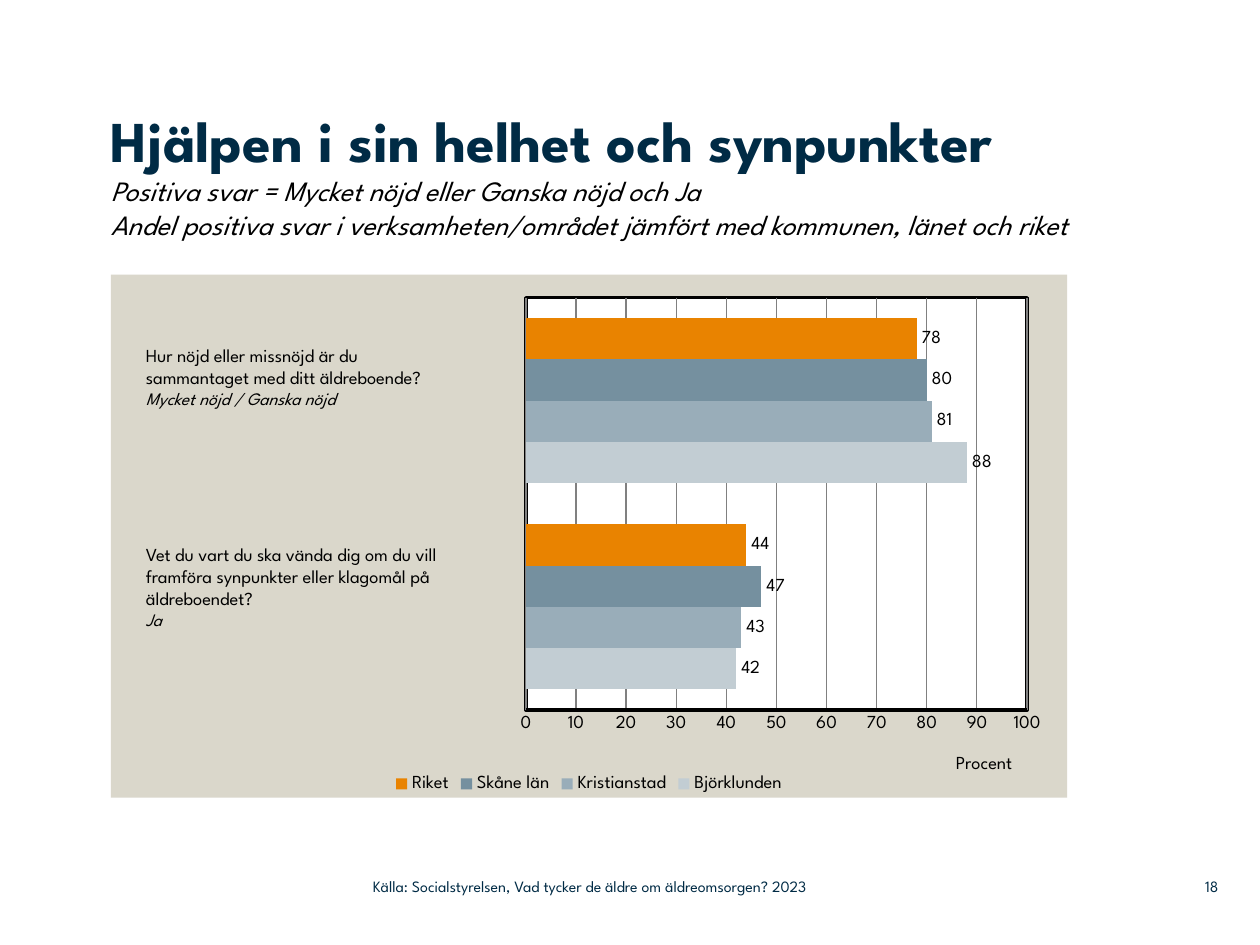
from dataclasses import dataclass

from lxml import etree
from pptx import Presentation
from pptx import util as u
from pptx.chart.data import CategoryChartData
from pptx.dml.color import RGBColor
from pptx.enum import chart as ch, text
from pptx.oxml import ns


@dataclass(frozen=True)
class Theme:
    font: str = "League Spartan"
    navy: str = "002B45"
    black: str = "000000"
    white: str = "FFFFFF"
    grid: str = "808080"
    panel: str = "DAD7CB"
    heading: float = 33
    subheading: float = 16
    body: float = 10.5
    answer: float = 10
    footer: float = 9


THEME = Theme()


def style_font(font, size, color, bold=False, italic=False):
    font.name, font.size, font.bold, font.italic = THEME.font, u.Pt(size), bold, italic
    font.color.rgb = RGBColor.from_string(color)


def add_text(paragraph, words, size=THEME.body, color=THEME.black, **style):
    run = paragraph.add_run()
    run.text = words
    style_font(run.font, size, color, **style)


def paint(fmt, color):
    fmt.fill.solid()
    fmt.fill.fore_color.rgb = RGBColor.from_string(color)


def draw_line(line, color, width):
    line.color.rgb = RGBColor.from_string(color)
    line.width = u.Pt(width)


def add_layout(parent, after, inner=False, **place):
    """Put a manual layout (fractions of the chart) in a chart part."""
    for old in parent.findall(ns.qn("c:layout")):
        parent.remove(old)
    layout = etree.Element(ns.qn("c:layout"))
    manual = etree.SubElement(layout, ns.qn("c:manualLayout"))
    settings = {"layoutTarget": "inner"} if inner else {}
    settings.update(xMode="edge", yMode="edge", **place)
    for tag, value in settings.items():
        etree.SubElement(manual, ns.qn(f"c:{tag}")).set("val", str(value))
    if after is None:
        parent.insert(0, layout)
    else:
        after.addnext(layout)


class Deck:
    """Holds the theme and the current slide."""

    def __init__(self, theme):
        self.theme = theme
        self.prs = Presentation()
        self.prs.slide_width, self.prs.slide_height = u.Inches(10), u.Inches(7.5)
        self.slide = self.prs.slides.add_slide(self.prs.slide_layouts[5])

    def title(self, box, heading, sublines):
        title = self.slide.shapes.title
        title.left, title.top, title.width, title.height = map(u.Inches, box)
        frame = title.text_frame
        frame.margin_left = frame.margin_right = frame.margin_top = frame.margin_bottom = 0
        frame.vertical_anchor = text.MSO_ANCHOR.TOP
        frame.auto_size = text.MSO_AUTO_SIZE.NONE
        paragraph = frame.paragraphs[0]
        paragraph.alignment = text.PP_ALIGN.LEFT
        add_text(paragraph, heading, self.theme.heading, self.theme.navy, bold=True)
        for subline in sublines:
            paragraph.add_line_break()
            add_text(paragraph, subline, self.theme.subheading, italic=True)

    def textbox(self, box):
        frame = self.slide.shapes.add_textbox(*map(u.Inches, box)).text_frame
        frame.word_wrap = True
        return frame

    def question(self, box, lines, answer):
        frame = self.textbox(box)
        for number, words in enumerate(lines):
            add_text(frame.add_paragraph() if number else frame.paragraphs[0], words)
        add_text(frame.add_paragraph(), answer, self.theme.answer, italic=True)

    def footer(self, box, words, align=text.PP_ALIGN.LEFT):
        frame = self.textbox(box)
        frame.margin_left = frame.margin_right = frame.margin_top = frame.margin_bottom = 0
        frame.vertical_anchor = text.MSO_ANCHOR.MIDDLE
        frame.paragraphs[0].alignment = align
        add_text(frame.paragraphs[0], words, self.theme.footer, self.theme.navy)

    def bar_chart(self, box, categories, series, axis_title):
        theme = self.theme
        data = CategoryChartData()
        data.categories = categories
        for name, values, _ in series:
            data.add_series(name, values)
        chart = self.slide.shapes.add_chart(
            ch.XL_CHART_TYPE.BAR_CLUSTERED, *map(u.Inches, box), data).chart
        style_font(chart.font, theme.body, theme.black)
        chart.has_title = False

        # Bars and value labels
        plot = chart.plots[0]
        plot.gap_width, plot.overlap, plot.vary_by_categories = 100, 0, False
        for bars, (_, _, color) in zip(plot.series, series):
            paint(bars.format, color)
            labels = bars.data_labels
            labels.show_value = True
            labels.position = ch.XL_LABEL_POSITION.OUTSIDE_END

        # Axes
        chart.category_axis.visible = False
        axis = chart.value_axis
        axis.minimum_scale, axis.maximum_scale, axis.major_unit = 0, 100, 10
        axis.major_tick_mark = ch.XL_TICK_MARK.NONE
        draw_line(axis.format.line, theme.black, 2)
        draw_line(axis.major_gridlines.format.line, theme.grid, 0.75)
        add_text(axis.axis_title.text_frame.paragraphs[0], axis_title)
        title_xml = axis.axis_title._element
        add_layout(title_xml, title_xml.find(ns.qn("c:tx")), x=0.88, y=0.91)

        # Legend
        chart.has_legend = True
        chart.legend.position = ch.XL_LEGEND_POSITION.BOTTOM
        chart.legend.include_in_layout = False
        style_font(chart.legend.font, theme.body, theme.black)

        # Plot area position, panel fill and frame
        space = chart._chartSpace
        area = space.chart.plotArea
        add_layout(area, None, inner=True, x=0.434, y=0.044, w=0.524, h=0.789)
        self.area_fill(area, theme.white, theme.black)
        self.area_fill(space, theme.panel)

    @staticmethod
    def area_fill(parent, fill, border=None):
        props = etree.Element(ns.qn("c:spPr"))

        def solid(holder, color):
            paint_xml = etree.SubElement(holder, ns.qn("a:solidFill"))
            etree.SubElement(paint_xml, ns.qn("a:srgbClr")).set("val", color)

        solid(props, fill)
        line = etree.SubElement(props, ns.qn("a:ln"))
        if border:
            line.set("w", str(u.Pt(2)))
            solid(line, border)
        else:
            etree.SubElement(line, ns.qn("a:noFill"))
        text_props = parent.find(ns.qn("c:txPr"))
        if text_props is None:
            parent.append(props)
        else:
            text_props.addprevious(props)


def main():
    deck = Deck(THEME)
    deck.title((0.88, 0.83, 7.79, 1.34), "Hjälpen i sin helhet och synpunkter", [
        "Positiva svar = Mycket nöjd eller Ganska nöjd och Ja",
        "Andel positiva svar i verksamheten/området jämfört med kommunen, länet och riket"])

    # Series run from the bottom bar to the top bar
    deck.bar_chart((0.88, 2.18, 7.59, 4.15), ["1", "2"], [
        ("Björklunden", (42, 88), "C2CDD3"),
        ("Kristianstad", (43, 81), "99ADB9"),
        ("Skåne län", (47, 80), "75909F"),
        ("Riket", (44, 78), "E98300")], "Procent")

    # Questions beside the bars
    deck.question((1.06, 2.68, 3.1, 0.81), [
        "Hur nöjd eller missnöjd är du",
        "sammantaget med ditt äldreboende?"], "Mycket nöjd / Ganska nöjd")
    deck.question((1.06, 4.26, 3.05, 0.81), [
        "Vet du vart du ska vända dig om du vill framföra synpunkter "
        "eller klagomål på äldreboendet?"], "Ja")

    # Source and page number
    deck.footer((2.96, 6.89, 4.43, 0.29),
                "Källa: Socialstyrelsen, Vad tycker de äldre om äldreomsorgen? 2023")
    deck.footer((9.2, 6.89, 0.47, 0.29), "18", text.PP_ALIGN.RIGHT)
    deck.prs.save("out.pptx")


if __name__ == "__main__":
    main()
